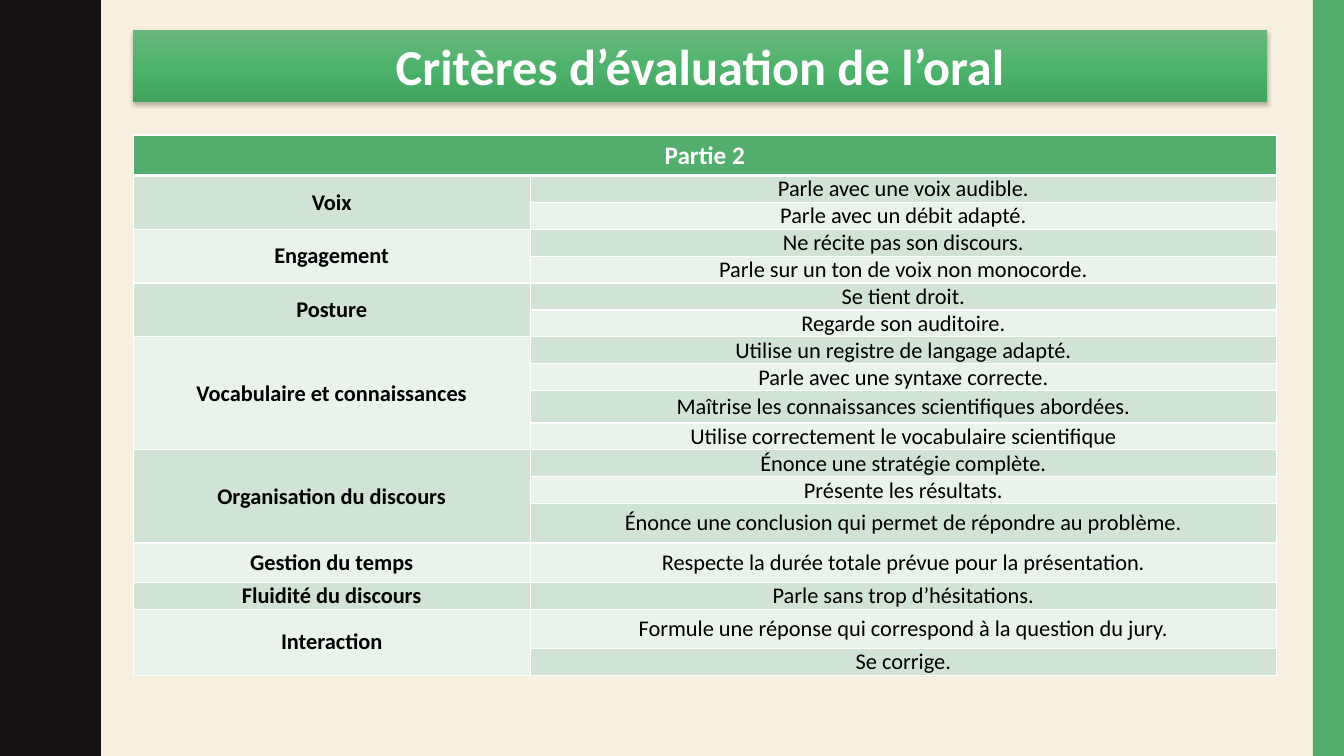
from dataclasses import dataclass
from itertools import product
from typing import Any

from lxml import etree
from pptx import Presentation
from pptx import util as u
from pptx.dml.color import RGBColor
from pptx.enum import shapes, text
from pptx.oxml import parse_xml
from pptx.oxml.ns import qn

CREAM = RGBColor(0xF7, 0xF0, 0xDF)
INK = RGBColor(0x17, 0x13, 0x12)
GREEN = RGBColor(0x53, 0xAE, 0x6E)
WHITE = RGBColor(0xFF, 0xFF, 0xFF)
BLACK = RGBColor(0x00, 0x00, 0x00)
BANDS = (RGBColor(0xD1, 0xE3, 0xD5), RGBColor(0xE9, 0xF2, 0xEB))
RAMP = {0: "6CB780", 50: "4EB36C", 100: "42A35E"}
SPACE = 'xmlns:a="http://schemas.openxmlformats.org/drawingml/2006/main"'

# Half a wave as (x, y); the other half mirrors it
RISE = [(0.78, 0), (0.78, 0.07), (0.79, 0.14), (0.8, 0.2), (0.81, 0.25),
        (0.83, 0.29), (0.85, 0.33), (0.87, 0.38), (0.89, 0.42), (0.91, 0.46),
        (0.93, 0.5), (0.95, 0.55), (0.96, 0.61), (0.97, 0.68), (0.97, 0.75)]
PITCH = 1.5
WAVES = 5
LINE = 0.25


@dataclass(frozen=True)
class Point:
    """One thing the jury looks at, with its row height in inches."""
    words: str
    height: float = LINE


@dataclass(frozen=True)
class Theme:
    name: str
    points: tuple[Point, ...]


THEMES = (
    Theme("Voix", (Point("Parle avec une voix audible."),
                   Point("Parle avec un débit adapté."))),
    Theme("Engagement", (Point("Ne récite pas son discours."),
                         Point("Parle sur un ton de voix non monocorde."))),
    Theme("Posture", (Point("Se tient droit."),
                      Point("Regarde son auditoire."))),
    Theme("Vocabulaire et connaissances", (
        Point("Utilise un registre de langage adapté."),
        Point("Parle avec une syntaxe correcte."),
        Point("Maîtrise les connaissances scientifiques abordées.", 0.32),
        Point("Utilise correctement le vocabulaire scientifique"))),
    Theme("Organisation du discours", (
        Point("Énonce une stratégie complète."),
        Point("Présente les résultats."),
        Point("Énonce une conclusion qui permet de répondre au problème.", 0.39))),
    Theme("Gestion du temps", (
        Point("Respecte la durée totale prévue pour la présentation.", 0.39),)),
    Theme("Fluidité du discours", (Point("Parle sans trop d’hésitations."),)),
    Theme("Interaction", (
        Point("Formule une réponse qui correspond à la question du jury.", 0.39),
        Point("Se corrige."))),
)


def write(frame: Any, words: str, size: float, color: RGBColor, bold: bool) -> None:
    line = frame.paragraphs[0]
    line.alignment = text.PP_ALIGN.CENTER
    run = line.add_run()
    run.text = words
    style = {"name": "Calibri", "size": u.Pt(size), "bold": bold}
    for key, value in style.items():
        setattr(run.font, key, value)
    run.font.color.rgb = color


def paint(shape: Any, color: RGBColor) -> None:
    shape.shadow.inherit = False
    shape.fill.solid()
    shape.fill.fore_color.rgb = color
    shape.line.fill.background()


def draw_wave(slide: Any) -> None:
    fall = [(x, PITCH - y) for x, y in RISE[-2:0:-1]]
    edge = [(x, y + PITCH * turn) for turn in range(WAVES) for x, y in RISE + fall]
    end = PITCH * WAVES
    outline = edge + [(RISE[0][0], end), (0, end)]
    pen = slide.shapes.build_freeform(0, 0, scale=u.Inches(1))
    pen.add_line_segments(outline, close=True)
    paint(pen.convert_to_shape(), INK)


def draw_strip(slide: Any) -> None:
    strip = slide.shapes.add_shape(shapes.MSO_SHAPE.RECTANGLE, u.Inches(13.02), 0,
                                   u.Inches(0.31), u.Inches(7.5))
    paint(strip, GREEN)


def draw_title(slide: Any) -> None:
    box = slide.shapes.add_shape(shapes.MSO_SHAPE.RECTANGLE, u.Inches(1.32),
                                 u.Inches(0.3), u.Inches(11.25), u.Inches(0.71))
    paint(box, GREEN)
    box.fill.gradient()
    box.fill.gradient_angle = 270
    stops = "".join(f'<a:gs pos="{at * 1000}"><a:srgbClr val="{color}"/></a:gs>'
                    for at, color in RAMP.items())
    props = box.element.spPr
    old = props.find(".//" + qn("a:gsLst"))
    old.getparent().replace(old, parse_xml(f"<a:gsLst {SPACE}>{stops}</a:gsLst>"))
    props.find(qn("a:effectLst")).append(parse_xml(
        f'<a:outerShdw {SPACE} blurRad="{u.Pt(3)}" dist="{u.Pt(2)}" dir="5400000" '
        'rotWithShape="0"><a:srgbClr val="000000"><a:alpha val="25000"/>'
        '</a:srgbClr></a:outerShdw>'))
    frame = box.text_frame
    form = {"word_wrap": True, "vertical_anchor": text.MSO_ANCHOR.TOP,
            "auto_size": text.MSO_AUTO_SIZE.SHAPE_TO_FIT_TEXT}
    for key, value in form.items():
        setattr(frame, key, value)
    write(frame, "Critères d’évaluation de l’oral", 36, WHITE, True)


def rule(cell: Any, top: float, base: float) -> None:
    """Draws white borders round a cell; widths in points."""
    props = cell._tc.get_or_add_tcPr()
    widths = {"lnL": 1, "lnR": 1, "lnT": top, "lnB": base}
    for place, (tag, width) in enumerate(widths.items()):
        line = etree.Element(qn("a:" + tag), w=str(u.Pt(width)))
        fill = etree.SubElement(line, qn("a:solidFill"))
        etree.SubElement(fill, qn("a:srgbClr"), val=str(WHITE))
        props.insert(place, line)


def fill_cell(cell: Any, words: str, color: RGBColor, bold: bool) -> None:
    form = {"margin_left": u.Inches(0.05), "margin_right": u.Inches(0.05),
            "margin_top": 0, "margin_bottom": 0}
    for key, value in form.items():
        setattr(cell, key, value)
    cell.fill.solid()
    cell.fill.fore_color.rgb = color
    write(cell.text_frame, words, 16, BLACK, bold)


def draw_table(slide: Any) -> None:
    heights = [0.29] + [point.height for theme in THEMES for point in theme.points]
    count = len(heights)
    table = slide.shapes.add_table(count, 2, u.Inches(1.32), u.Inches(1.34),
                                   u.Inches(11.34), u.Inches(sum(heights))).table
    table.first_row = table.horz_banding = False
    for column, width in zip(table.columns, (3.94, 7.4)):
        column.width = u.Inches(width)
    for row, height in zip(table.rows, heights):
        row.height = u.Inches(height)

    head = table.cell(0, 0)
    head.merge(table.cell(0, 1))
    head.fill.solid()
    head.fill.fore_color.rgb = GREEN
    write(head.text_frame, "Partie 2", 18, WHITE, True)

    row = 1
    for order, theme in enumerate(THEMES):
        label = table.cell(row, 0)
        last = row + len(theme.points) - 1
        if last > row:
            label.merge(table.cell(last, 0))
        fill_cell(label, theme.name, BANDS[order % 2], True)
        for point in theme.points:
            fill_cell(table.cell(row, 1), point.words, BANDS[(row - 1) % 2], False)
            row += 1

    for row, column in product(range(count), range(2)):
        cell = table.cell(row, column)
        cell.vertical_anchor = text.MSO_ANCHOR.MIDDLE
        rule(cell, 3 if row == 1 else 1, 3 if row == 0 else 1)


def main() -> None:
    deck = Presentation()
    deck.slide_width, deck.slide_height = u.Inches(13.33), u.Inches(7.5)
    slide = deck.slides.add_slide(deck.slide_layouts[6])
    slide.background.fill.solid()
    slide.background.fill.fore_color.rgb = CREAM
    for draw in (draw_wave, draw_strip, draw_title, draw_table):
        draw(slide)
    deck.save("out.pptx")


if __name__ == "__main__":
    main()
